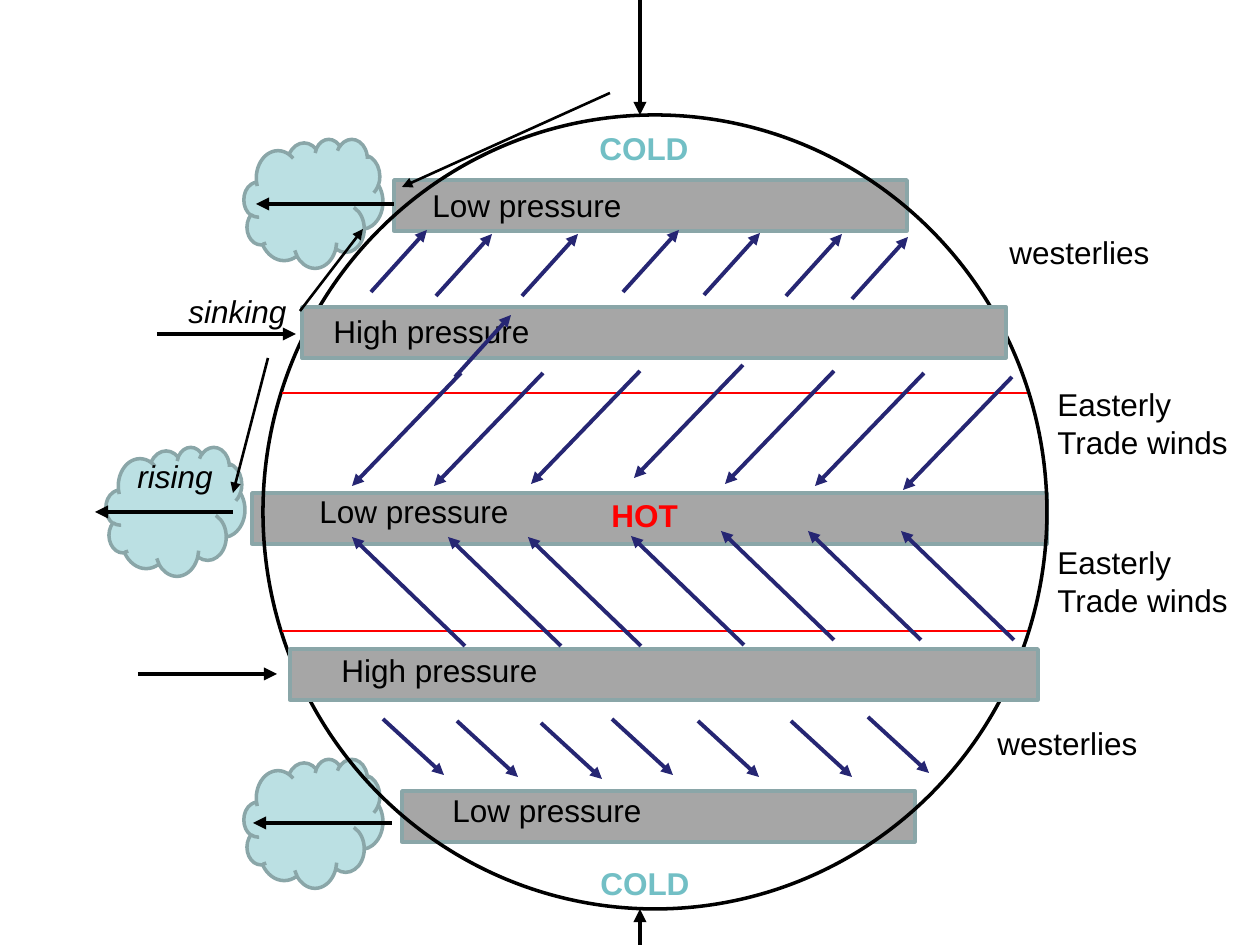
from lxml.etree import SubElement
from pptx import Presentation
from pptx.dml.color import RGBColor
from pptx.enum.shapes import MSO_CONNECTOR, MSO_SHAPE
from pptx.enum.text import MSO_AUTO_SIZE
from pptx.oxml.ns import qn
from pptx.util import Emu, Pt

BLACK, RED, NAVY, TEAL = "000000", "FF0000", "262673", "72BFC5"
GREY, MIST, EDGE = "A6A6A6", "BBE0E3", "8AA6A8"

LOWS = [(252, 493, 795), (402, 791, 513), (394, 180, 513)]
HIGHS = [(302, 307, 704), (290, 649, 748)]
CLOUDS = [(244, 759), (244, 139), (106, 447)]

# Each belt of wind: the shared run and rise, then where its arrows start
WINDS = [
    (-109, 113, [(461, 373), (543, 373), (640, 371), (743, 365),
                 (834, 371), (924, 373), (1012, 377)]),
    (-113, -109, [(465, 646), (561, 646), (641, 646), (744, 645),
                  (834, 640), (921, 640), (1014, 640)]),
    (56, -62, [(371, 292), (436, 296), (522, 296), (623, 292),
               (704, 295), (786, 296), (852, 299), (455, 377)]),
    (61, 56, [(383, 719), (457, 721), (541, 723), (612, 719),
              (698, 721), (791, 721), (868, 717)]),
]

# Air that rises, sinks or reaches the poles: start and end
FLOWS = [
    (233, 512, 95, 512), (392, 823, 253, 823), (394, 204, 256, 204),
    (157, 334, 296, 334), (138, 674, 277, 674),
    (640, 978, 640, 909), (640, -24, 640, 115),
]
CELLS = [(610, 93, 402, 187), (268, 358, 233, 493), (300, 311, 363, 229)]

LABELS = [
    ("Low pressure", 307, 486, 217), ("Low pressure", 420, 180, 217),
    ("Low pressure", 440, 785, 217), ("High pressure", 321, 306, 223),
    ("High pressure", 329, 645, 223),
    ("westerlies", 997, 227, 166), ("westerlies", 985, 718, 166),
    ("Easterly\nTrade winds", 1045, 379, 198),
    ("Easterly\nTrade winds", 1045, 537, 198),
]


def px(n):
    return Emu(round(n * 914400 / 126))


def rgb(code):
    return RGBColor.from_string(code)


def shape(slide, kind, x, y, w, h, fill=None, line=EDGE):
    item = slide.shapes.add_shape(kind, px(x), px(y), px(w), px(h))
    item.shadow.inherit = False
    if fill:
        item.fill.solid()
        item.fill.fore_color.rgb = rgb(fill)
    else:
        item.fill.background()
    item.line.color.rgb = rgb(line)
    item.line.width = Pt(2)


def bars(slide, rows):
    for x, y, w in rows:
        shape(slide, MSO_SHAPE.RECTANGLE, x, y, w, 51, GREY)


def line(slide, x1, y1, x2, y2, color=BLACK, width=2.5, head=True):
    item = slide.shapes.add_connector(
        MSO_CONNECTOR.STRAIGHT, px(x1), px(y1), px(x2), px(y2))
    item.line.color.rgb = rgb(color)
    item.line.width = Pt(width)
    if head:
        SubElement(item.line._get_or_add_ln(), qn("a:tailEnd"), type="triangle")
    SubElement(item._element.spPr, qn("a:effectLst"))


def text(slide, words, x, y, w, color=BLACK, bold=False, italic=False):
    rows = words.split("\n")
    box = slide.shapes.add_textbox(px(x), px(y), px(w), px(12 + 38 * len(rows)))
    frame = box.text_frame
    frame.word_wrap = False
    frame.auto_size = MSO_AUTO_SIZE.SHAPE_TO_FIT_TEXT
    frame.text = words
    for para in frame.paragraphs:
        font = para.runs[0].font
        font.name, font.size = "Arial", Pt(18)
        font.bold, font.italic = bold, italic
        font.color.rgb = rgb(color)


def main():
    deck = Presentation()
    deck.slide_width, deck.slide_height = px(1260), px(945)
    slide = deck.slides.add_slide(deck.slide_layouts[6])

    bars(slide, LOWS)
    for x, y in CLOUDS:
        shape(slide, MSO_SHAPE.CLOUD, x, y, 139, 129, MIST)
    shape(slide, MSO_SHAPE.OVAL, 263, 115, 784, 794, line=BLACK)
    for y in (393, 631):
        line(slide, 282, y, 1027, y, RED, 0.75, head=False)
    bars(slide, HIGHS)

    text(slide, "HOT", 599, 490, 93, RED, bold=True)
    for x, y in ((587, 123), (588, 858)):
        text(slide, "COLD", x, y, 116, TEAL, bold=True)
    text(slide, "rising", 125, 451, 102, italic=True)
    text(slide, "sinking", 176, 286, 125, italic=True)
    for label in LABELS:
        text(slide, *label)

    for flow in FLOWS:
        line(slide, *flow)
    for dx, dy, starts in WINDS:
        for x, y in starts:
            line(slide, x, y, x + dx, y + dy, NAVY, 2.25)
    for cell in CELLS:
        line(slide, *cell, width=1.5)

    deck.save("out.pptx")


if __name__ == "__main__":
    main()
